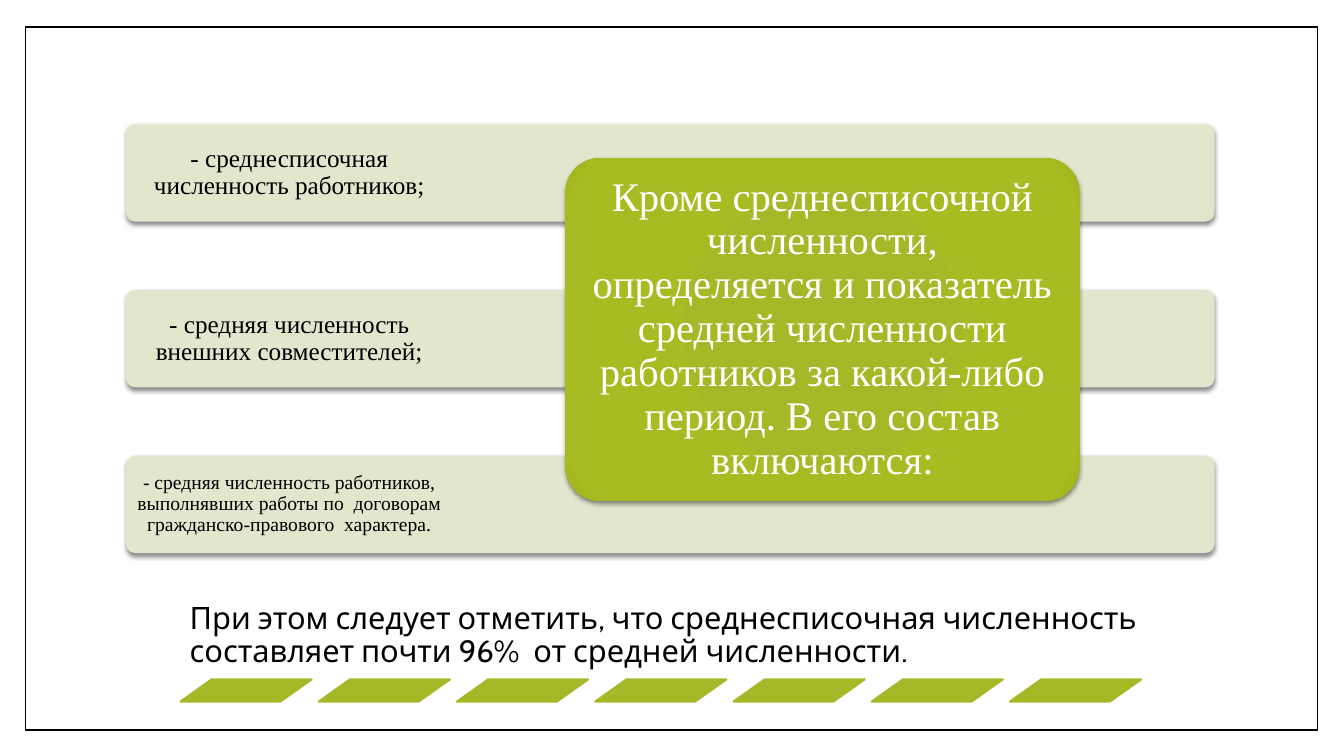
from dataclasses import dataclass

from pptx import Presentation
from pptx.dml.color import RGBColor
from pptx.enum.shapes import MSO_SHAPE
from pptx.enum.text import MSO_ANCHOR, PP_ALIGN
from pptx.oxml import parse_xml
from pptx.oxml.ns import nsdecls
from pptx.util import Pt

RECT, ROUND, SLANT = MSO_SHAPE.RECTANGLE, MSO_SHAPE.ROUNDED_RECTANGLE, MSO_SHAPE.PARALLELOGRAM
MIDDLE, BOTTOM = MSO_ANCHOR.MIDDLE, MSO_ANCHOR.BOTTOM
CENTER, LEFT = PP_ALIGN.CENTER, PP_ALIGN.LEFT


@dataclass(frozen=True)
class Theme:
    white: str = "FFFFFF"
    black: str = "000000"
    pale: str = "E1E6CD"
    green: str = "A6B727"
    glow: tuple = ((0, "A6B727"), (90, "A9BB23"), (100, "A1B316"))
    serif: str = "Times New Roman"
    sans: str = "Cabin"
    small: float = 14
    body: float = 18
    note: float = 22
    lead: float = 29


THEME = Theme()


@dataclass(frozen=True)
class Area:
    left: float
    top: float
    width: float
    height: float

    def pts(self) -> list:
        return [Pt(v) for v in (self.left, self.top, self.width, self.height)]


@dataclass(frozen=True)
class Block:
    kind: int
    area: Area
    fill: str
    adjust: float | None = None
    line: str | None = None
    weight: float = 1
    shadow: bool = False


@dataclass(frozen=True)
class Label:
    text: str
    area: Area
    size: float
    inset: float
    font: str = THEME.serif
    color: str = THEME.black
    align: int = CENTER
    anchor: int = MIDDLE


def draw_block(slide, block: Block):
    shape = slide.shapes.add_shape(block.kind, *block.area.pts())
    if block.adjust is not None:
        shape.adjustments[0] = block.adjust
    shape.fill.solid()
    shape.fill.fore_color.rgb = RGBColor.from_string(block.fill)
    if block.line:
        shape.line.color.rgb = RGBColor.from_string(block.line)
        shape.line.width = Pt(block.weight)
    else:
        shape.line.fill.background()
    shape.shadow.inherit = False
    if block.shadow:
        shape._element.spPr.find("{*}effectLst").append(parse_xml(
            f'<a:outerShdw {nsdecls("a")} blurRad="{Pt(3)}" dist="{Pt(2)}" dir="5400000" '
            f'rotWithShape="0"><a:srgbClr val="{THEME.black}"><a:alpha val="45000"/>'
            '</a:srgbClr></a:outerShdw>'))
    return shape


def add_glow(shape, stops: tuple) -> None:
    marks = "".join(f'<a:gs pos="{pos * 1000}"><a:srgbClr val="{color}"/></a:gs>'
                    for pos, color in stops)
    props = shape._element.spPr
    props.replace(props.find("{*}solidFill"), parse_xml(
        f'<a:gradFill {nsdecls("a")} rotWithShape="1"><a:gsLst>{marks}</a:gsLst>'
        '<a:path path="circle"><a:fillToRect l="100000" t="100000" r="100000" b="100000"/>'
        '</a:path></a:gradFill>'))


def draw_label(slide, label: Label) -> None:
    frame = slide.shapes.add_textbox(*label.area.pts()).text_frame
    edge = Pt(label.inset)
    para = frame.paragraphs[0]
    run = para.add_run()
    run.text = label.text
    run.font.color.rgb = RGBColor.from_string(label.color)
    formats = (
        (frame, dict(word_wrap=True, vertical_anchor=label.anchor, margin_left=edge,
                     margin_right=edge, margin_top=edge, margin_bottom=edge)),
        (para, dict(alignment=label.align, line_spacing=0.9)),
        (run.font, dict(name=label.font, size=Pt(label.size))),
    )
    for target, values in formats:
        for name, value in values.items():
            setattr(target, name, value)


# Bars: text, type size, inset
BARS = (
    ("- среднесписочная численность работников;", THEME.body, 10),
    ("- средняя численность внешних совместителей;", THEME.body, 10),
    ("- средняя численность работников, выполнявших работы по  договорам "
     "гражданско-правового  характера.", THEME.small, 8),
)
BAR_LEFT, BAR_TOP, BAR_STEP, BAR_HIGH = 90, 88.6, 118.4, 69.8

LEAD = Label("Кроме среднесписочной численности, определяется и показатель средней "
             "численности работников за какой-либо период. В его состав включаются:",
             Area(411, 120.2, 353, 230.4), THEME.lead, 8.6, color=THEME.white)
NOTE = Label("При этом следует отметить, что среднесписочная численность  составляет "
             "почти 96%  от средней численности.",
             Area(129, 421.2, 700, 63.4), THEME.note, 6.5, THEME.sans,
             align=LEFT, anchor=BOTTOM)
SLANTS, SLANT_LEFT, SLANT_STEP = 7, 129, 98.75


def main() -> None:
    deck = Presentation()
    deck.slide_width, deck.slide_height = Pt(960), Pt(540)
    slide = deck.slides.add_slide(deck.slide_layouts[6])

    # Frame
    draw_block(slide, Block(RECT, Area(18, 19.4, 923, 502), THEME.white, line=THEME.black))

    # Bars with their text, lowest first
    for row, (text, size, inset) in reversed(list(enumerate(BARS))):
        top = BAR_TOP + row * BAR_STEP
        draw_block(slide, Block(ROUND, Area(BAR_LEFT, top, 777.6, BAR_HIGH),
                                THEME.pale, 0.1, shadow=True))
        draw_label(slide, Label(text, Area(BAR_LEFT, top, 233.3, BAR_HIGH), size, inset))

    # Lead box
    box = draw_block(slide, Block(ROUND, Area(403.9, 113, 367.2, 244.8),
                                  THEME.green, 0.1, shadow=True))
    add_glow(box, THEME.glow)
    draw_label(slide, LEAD)

    # Note and slanted strip
    draw_label(slide, NOTE)
    for col in range(SLANTS):
        area = Area(SLANT_LEFT + col * SLANT_STEP, 485.3, 93.6, 15.8)
        draw_block(slide, Block(SLANT, area, THEME.green, 1.41, THEME.green, 1.5))

    deck.save("out.pptx")


if __name__ == "__main__":
    main()
